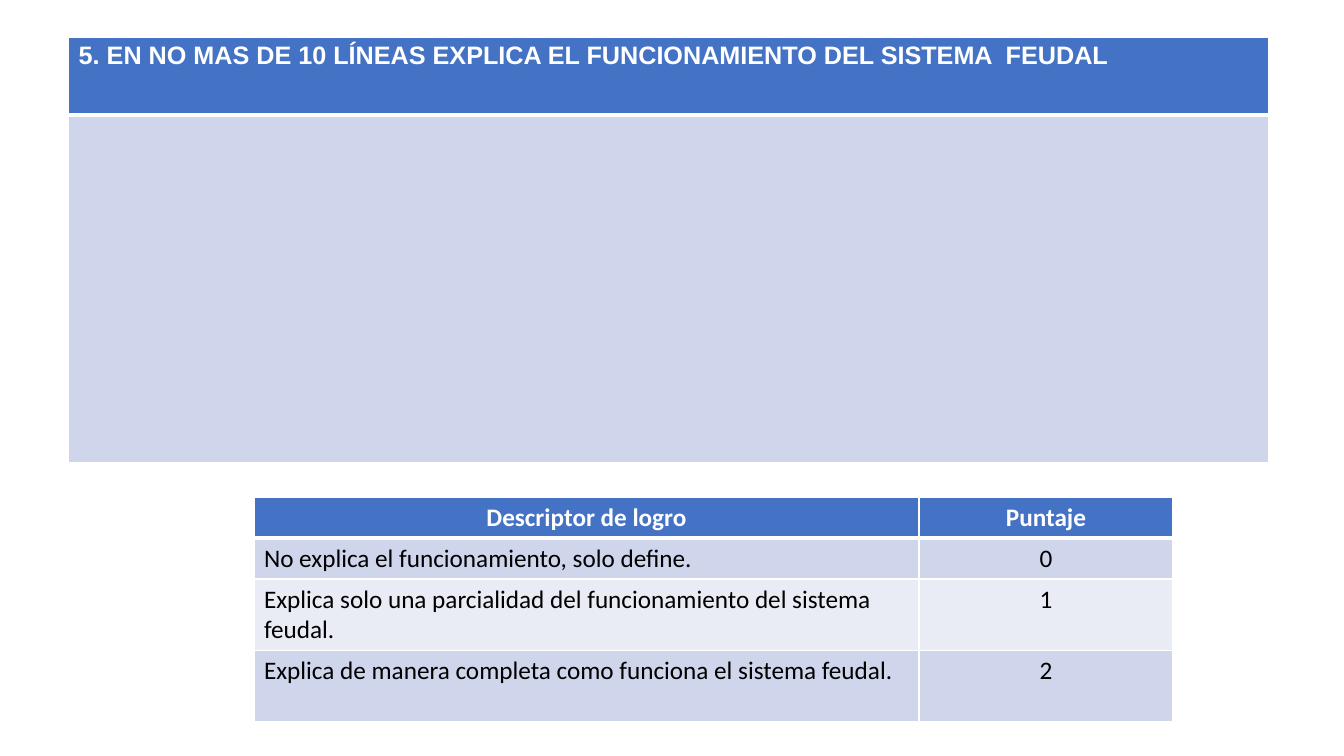
from dataclasses import dataclass

from lxml.etree import SubElement
from pptx import Presentation
from pptx.dml.color import RGBColor
from pptx.enum.text import PP_ALIGN
from pptx.oxml.ns import qn
from pptx.slide import Slide
from pptx.table import _Cell
from pptx.util import Cm, Pt

WHITE = "FFFFFF"
BLACK = "000000"
HEADER_FILL = "4472C4"
BAND_FILLS = ("CFD5EA", "E9EBF5")


@dataclass(frozen=True)
class TableSpec:
    left: float
    top: float
    widths: tuple[float, ...]
    heights: tuple[float, ...]
    rows: tuple[tuple[str, ...], ...]
    font: str
    header_align: PP_ALIGN


QUESTION = TableSpec(
    left=1.73,
    top=0.93,
    widths=(30.25,),
    heights=(1.97, 8.76),
    rows=(
        ("5. EN NO MAS DE 10 LÍNEAS EXPLICA EL FUNCIONAMIENTO DEL SISTEMA  FEUDAL",),
        ("",),
    ),
    font="Arial",
    header_align=PP_ALIGN.LEFT,
)

RUBRIC = TableSpec(
    left=6.4,
    top=12.53,
    widths=(16.76, 6.4),
    heights=(1.03, 1.03, 1.8, 1.8),
    rows=(
        ("Descriptor de logro", "Puntaje"),
        ("No explica el funcionamiento, solo define.", "0"),
        ("Explica solo una parcialidad del funcionamiento del sistema feudal.", "1"),
        ("Explica de manera completa como funciona el sistema feudal.", "2"),
    ),
    font="Calibri",
    header_align=PP_ALIGN.CENTER,
)


def color(value: str) -> RGBColor:
    return RGBColor.from_string(value)


def set_borders(cell: _Cell, top: float, bottom: float) -> None:
    properties = cell._tc.get_or_add_tcPr()
    for side, width in (("L", 1), ("R", 1), ("T", top), ("B", bottom)):
        line = SubElement(properties, qn(f"a:ln{side}"), w=str(Pt(width)))
        fill = SubElement(line, qn("a:solidFill"))
        SubElement(fill, qn("a:srgbClr"), val=WHITE)


def write_cell(cell: _Cell, text: str, font: str, align: PP_ALIGN, is_header: bool) -> None:
    para = cell.text_frame.paragraphs[0]
    para.alignment = align
    para.font.size = Pt(18)
    if not text:
        return
    span = para.add_run()
    span.text = text
    span.font.name = font
    span.font.size = Pt(18)
    span.font.bold = is_header
    span.font.color.rgb = color(WHITE if is_header else BLACK)


def draw_table(page: Slide, spec: TableSpec) -> None:
    frame = page.shapes.add_table(
        len(spec.heights), len(spec.widths), Cm(spec.left), Cm(spec.top),
        Cm(sum(spec.widths)), Cm(sum(spec.heights)),
    )
    table = frame.table
    for column, width in zip(table.columns, spec.widths):
        column.width = Cm(width)
    for row, height in zip(table.rows, spec.heights):
        row.height = Cm(height)
    for row_index, texts in enumerate(spec.rows):
        is_header = row_index == 0
        fill = HEADER_FILL if is_header else BAND_FILLS[(row_index - 1) % 2]
        for column_index, text in enumerate(texts):
            cell = table.cell(row_index, column_index)
            set_borders(cell, 3 if row_index == 1 else 1, 3 if is_header else 1)
            cell.fill.solid()
            cell.fill.fore_color.rgb = color(fill)
            body_align = PP_ALIGN.CENTER if column_index else PP_ALIGN.LEFT
            align = spec.header_align if is_header else body_align
            write_cell(cell, text, spec.font, align, is_header)


def main() -> None:
    deck = Presentation()
    deck.slide_width = Cm(33.87)
    deck.slide_height = Cm(19.05)
    page = deck.slides.add_slide(deck.slide_layouts[6])
    for spec in (QUESTION, RUBRIC):
        draw_table(page, spec)
    deck.save("out.pptx")


if __name__ == "__main__":
    main()
